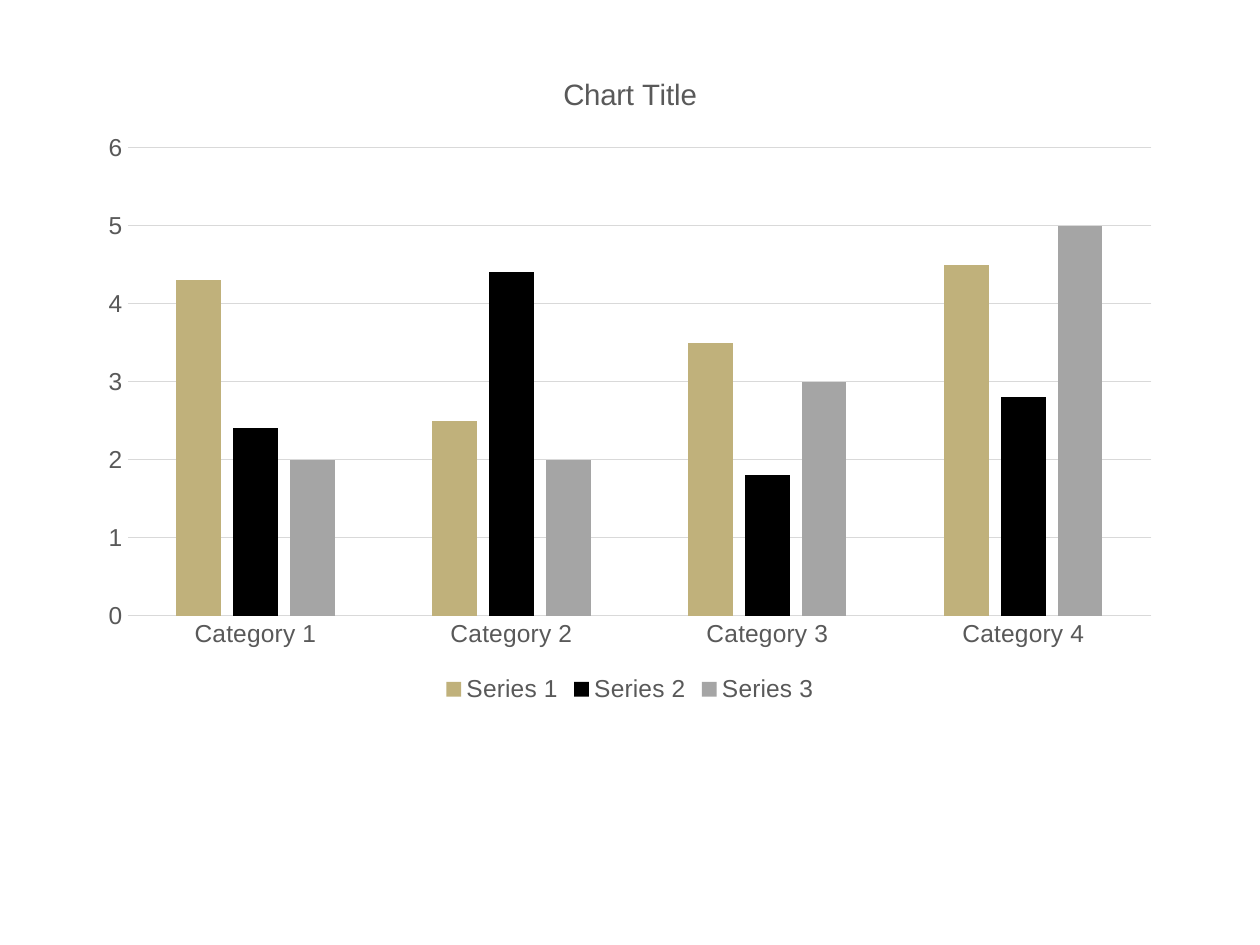
from pptx import Presentation
from pptx.chart.data import CategoryChartData
from pptx.dml.color import RGBColor
from pptx.enum.chart import XL_CHART_TYPE, XL_LEGEND_POSITION, XL_TICK_MARK
from pptx.util import Inches, Pt

COLUMN = XL_CHART_TYPE.COLUMN_CLUSTERED
BOTTOM = XL_LEGEND_POSITION.BOTTOM
NO_TICK = XL_TICK_MARK.NONE

GOLD = RGBColor(0xC0, 0xB1, 0x7B)
BLACK = RGBColor(0, 0, 0)
GRAY = RGBColor(0xA5, 0xA5, 0xA5)
TEXT = RGBColor(0x59, 0x59, 0x59)
RULE = RGBColor(0xD9, 0xD9, 0xD9)

# Content
TITLE = "Chart Title"
CATS = ["Category 1", "Category 2", "Category 3", "Category 4"]
SERIES = [
    ("Series 1", (4.3, 2.5, 3.5, 4.5), GOLD),
    ("Series 2", (2.4, 4.4, 1.8, 2.8), BLACK),
    ("Series 3", (2, 2, 3, 5), GRAY),
]
BOX = (0.69, 0.4, 8.62, 5.22)
FONT = {"name": "Arial", "size": Pt(14), "bold": False}


def style(font, color=TEXT, **extra):
    for key, value in {**FONT, **extra}.items():
        setattr(font, key, value)
    font.color.rgb = color


def rule(line):
    line.color.rgb = RULE
    line.width = Pt(0.75)


# Slide
prs = Presentation()
prs.slide_width, prs.slide_height = Inches(10), Inches(7.5)
slide = prs.slides.add_slide(prs.slide_layouts[6])

# Chart and its data
data = CategoryChartData()
data.categories = CATS
for name, values, _ in SERIES:
    data.add_series(name, values)
chart = slide.shapes.add_chart(COLUMN, *map(Inches, BOX), data).chart
style(chart.font, BLACK)

# Title
chart.has_title = True
frame = chart.chart_title.text_frame
frame.text = TITLE
style(frame.paragraphs[0].runs[0].font, size=Pt(16.8))
chart.chart_title.include_in_layout = False

# Columns
plot = chart.plots[0]
plot.gap_width, plot.overlap = 219, -27
plot.vary_by_categories = False
for series, (_, _, color) in zip(plot.series, SERIES):
    series.format.fill.solid()
    series.format.fill.fore_color.rgb = color
    series.invert_if_negative = False

# Axes
cat, val = chart.category_axis, chart.value_axis
for axis in (cat, val):
    axis.major_tick_mark = axis.minor_tick_mark = NO_TICK
    style(axis.tick_labels.font)
rule(cat.format.line)
val.format.line.fill.background()
val.has_major_gridlines = True
rule(val.major_gridlines.format.line)
val.minimum_scale, val.maximum_scale, val.major_unit = 0, 6, 1

# Legend
chart.has_legend = True
chart.legend.position = BOTTOM
chart.legend.include_in_layout = False
style(chart.legend.font)

prs.save("out.pptx")
